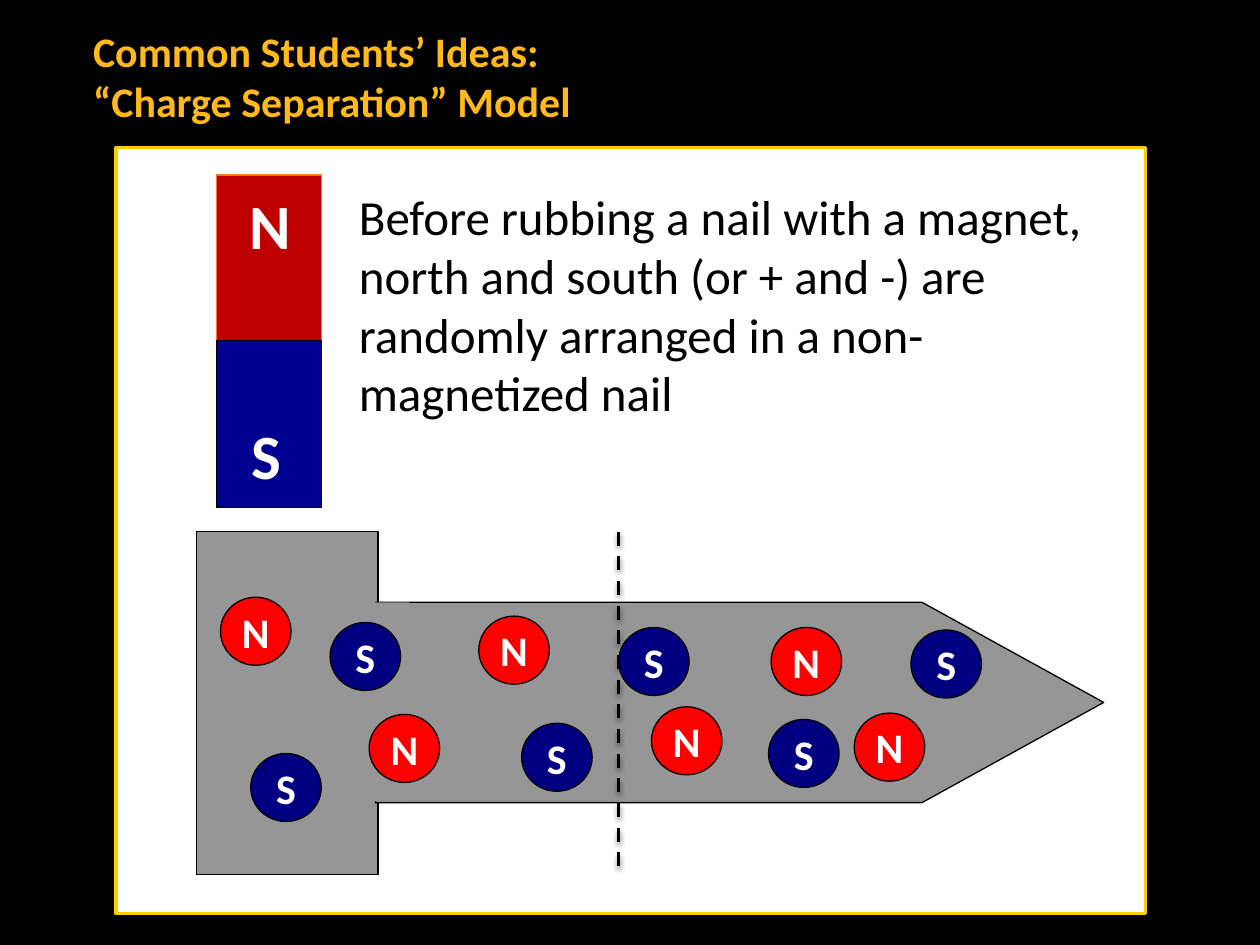
from lxml import etree
from pptx import Presentation
from pptx.dml.color import RGBColor
from pptx.enum.dml import MSO_LINE
from pptx.enum.shapes import MSO_CONNECTOR, MSO_SHAPE
from pptx.enum.text import MSO_ANCHOR, MSO_AUTO_SIZE, PP_ALIGN
from pptx.oxml.ns import qn
from pptx.util import Inches, Pt

RECT = MSO_SHAPE.RECTANGLE
PENTAGON = MSO_SHAPE.PENTAGON
OVAL = MSO_SHAPE.OVAL
STRAIGHT = MSO_CONNECTOR.STRAIGHT
DASH = MSO_LINE.DASH
MIDDLE = MSO_ANCHOR.MIDDLE
CENTER = PP_ALIGN.CENTER
GROW = MSO_AUTO_SIZE.SHAPE_TO_FIT_TEXT

FONT = "Calibri"
BLACK, WHITE, STEEL = "000000", "FFFFFF", "969696"
POLE_COLORS = {"N": "FF0000", "S": "000080"}

# Left and top of each pole inside the nail, back to front
POLES = [
    ("N", 1.75, 4.74), ("N", 3.8, 4.89), ("N", 6.12, 4.98), ("N", 5.17, 5.61),
    ("S", 1.99, 5.98), ("S", 4.14, 5.74), ("S", 4.91, 4.98), ("S", 7.23, 5),
    ("S", 6.1, 5.71), ("N", 6.78, 5.66), ("S", 2.62, 4.94), ("N", 2.93, 5.67),
]


def color(hex_string):
    return RGBColor.from_string(hex_string)


def add_block(shapes, kind, box, fill, line=None, width=0.75):
    sp = shapes.add_shape(kind, *map(Inches, box))
    sp.shadow.inherit = False
    sp.fill.solid()
    sp.fill.fore_color.rgb = color(fill)
    if line:
        sp.line.color.rgb = color(line)
        sp.line.width = Pt(width)
    else:
        sp.line.fill.background()
    return sp


def set_text(tf, text, size, hex_string, bold=False, wrap=False):
    tf.word_wrap = wrap
    p = tf.paragraphs[0]
    p.text = text
    p.font.name = FONT
    p.font.size = Pt(size)
    p.font.bold = bold
    p.font.color.rgb = color(hex_string)
    return p


def add_text(shapes, box, text, size, hex_string, bold=False, wrap=False):
    tf = shapes.add_textbox(*map(Inches, box)).text_frame
    set_text(tf, text, size, hex_string, bold, wrap)
    tf.auto_size = GROW


def add_pole(shapes, letter, left, top):
    sp = add_block(shapes, OVAL, (left, top, 0.56, 0.54), POLE_COLORS[letter], BLACK)
    tf = sp.text_frame
    tf.vertical_anchor = MIDDLE
    set_text(tf, letter, 24, WHITE, bold=True).alignment = CENTER


def add_divider(shapes, x, top, bottom):
    line = shapes.add_connector(STRAIGHT, Inches(x), Inches(top), Inches(x), Inches(bottom))
    line.line.color.rgb = color(BLACK)
    line.line.width = Pt(2)
    line.line.dash_style = DASH
    # Soft shadow straight below
    effects = etree.SubElement(line._element.spPr, qn("a:effectLst"))
    shadow = etree.SubElement(effects, qn("a:outerShdw"), blurRad=str(Pt(3.1)),
                              dist=str(Pt(1.6)), dir="5400000", rotWithShape="0")
    black = etree.SubElement(shadow, qn("a:srgbClr"), val=BLACK)
    etree.SubElement(black, qn("a:alpha"), val="38000")


def add_nail(shapes):
    nail = shapes.add_group_shape().shapes
    add_block(nail, RECT, (1.56, 4.22, 1.44, 2.72), STEEL, BLACK)
    shaft = add_block(nail, PENTAGON, (2.98, 4.78, 5.78, 1.59), STEEL, BLACK)
    shaft.adjustments[0] = 0.907


def add_magnet(shapes):
    magnet = shapes.add_group_shape().shapes
    add_block(magnet, RECT, (1.72, 1.39, 0.83, 1.33), "BF0000", "F97817")
    add_block(magnet, RECT, (1.72, 2.7, 0.83, 1.33), "000090", BLACK)
    add_text(shapes, (1.9, 3.26, 0.44, 0.71), "S", 36, WHITE, bold=True)
    add_text(shapes, (1.88, 1.43, 0.53, 0.71), "N", 36, WHITE, bold=True)


def main():
    prs = Presentation()
    prs.slide_width, prs.slide_height = Inches(10), Inches(7.5)
    s = prs.slides.add_slide(prs.slide_layouts[6])
    s.background.fill.solid()
    s.background.fill.fore_color.rgb = color(BLACK)
    shapes = s.shapes

    # Panel, nail and bar magnet
    add_block(shapes, RECT, (0.92, 1.17, 8.17, 6.08), WHITE, "FFCC00", 2)
    add_nail(shapes)
    add_magnet(shapes)

    # Cover for the seam between nail head and shaft
    add_block(shapes, RECT, (2.75, 4.78, 0.5, 1.58), STEEL)

    # Randomly arranged poles
    for letter, left, top in POLES:
        add_pole(shapes, letter, left, top)

    # Explanation and title
    add_text(shapes, (2.75, 1.43, 6.15, 1.99),
             "Before rubbing a nail with a magnet, north and south (or + and -) "
             "are randomly arranged in a non-magnetized nail", 28, BLACK, wrap=True)
    add_text(shapes, (0.64, 0.15, 4.83, 0.91),
             "Common Students’ Ideas: “Charge Separation” Model",
             24, "FFB91D", bold=True, wrap=True)

    # Middle of the nail
    add_divider(shapes, 4.91, 4.22, 6.94)
    prs.save("out.pptx")


if __name__ == "__main__":
    main()
